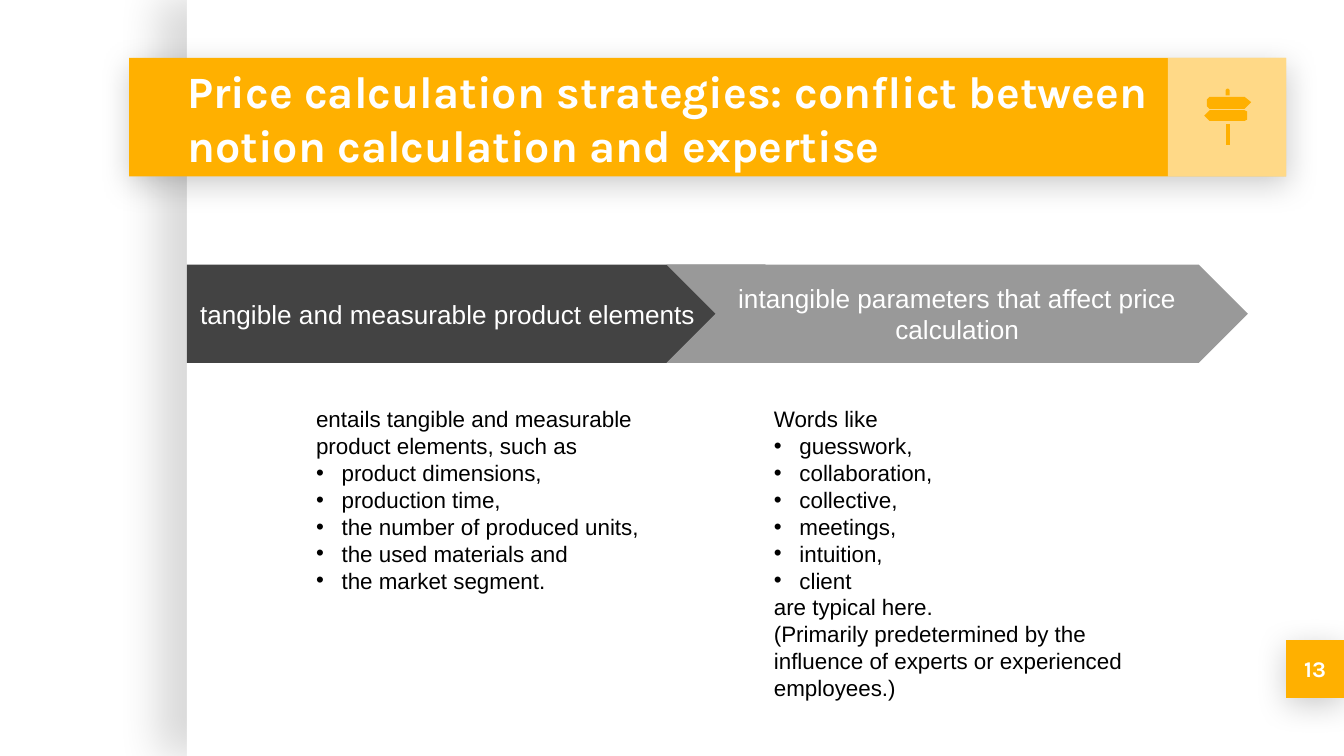
import pptx
import pptx.dml.color
import pptx.enum.shapes
import pptx.enum.text
import pptx.oxml
import pptx.oxml.ns
import pptx.util

ORANGE, WHITE, BLACK = "FFB000", "FFFFFF", "000000"
SHAPES = pptx.enum.shapes.MSO_SHAPE
ALIGN = pptx.enum.text.PP_ALIGN
ANCHOR = pptx.enum.text.MSO_ANCHOR
NAMESPACE = pptx.oxml.ns.nsdecls("a")

# A 16:9 slide
presentation = pptx.Presentation()
presentation.slide_width = pptx.util.Inches(10)
presentation.slide_height = presentation.slide_width * 9 // 16
slide = presentation.slides.add_slide(presentation.slide_layouts[6])

# Square grid: 100 columns across the slide, rows of the same size
cell = presentation.slide_width // 100
indent = int(1.9 * cell)


def paint(fill, color):
    fill.solid()
    fill.fore_color.rgb = pptx.dml.color.RGBColor.from_string(color)


def write(shape, *lines, size=12, font="Arial", color=WHITE, bold=False,
          align=ALIGN.LEFT, anchor=ANCHOR.MIDDLE):
    """Fill a shape with paragraphs; a line starting with • becomes a bullet."""
    frame = shape.text_frame
    frame.word_wrap = True
    frame.vertical_anchor = anchor
    frame.margin_left = frame.margin_right = cell
    frame.margin_top = frame.margin_bottom = cell
    for index, line in enumerate(lines):
        paragraph = frame.add_paragraph() if index else frame.paragraphs[0]
        paragraph.alignment = align
        if line.startswith("•"):
            properties = paragraph._p.get_or_add_pPr()
            properties.set("marL", str(indent))
            properties.set("indent", str(-indent))
            for bullet in (f'<a:buClr {NAMESPACE}><a:srgbClr val="{color}"/></a:buClr>',
                           f'<a:buFont {NAMESPACE} typeface="{font}"/>',
                           f'<a:buChar {NAMESPACE} char="•"/>'):
                properties.append(pptx.oxml.parse_xml(bullet))
        run = paragraph.add_run()
        run.text = line.lstrip("• ")
        run.font.size = pptx.util.Pt(size)
        run.font.name = font
        run.font.bold = bold
        paint(run.font.fill, color)


# Panels: place, fill, opacity %, shadow (opacity %, blur pt, distance pt, degrees)
soft_shadow = (20, 16.9, 3.8, 90)
number_place = (95.7, 47.63, 4.3, 4.3)
panels = [
    ((13.9, 0, 86.1, 56.25), WHITE, 100, (15, 22.5, 15, 180)),
    (number_place, ORANGE, 100, soft_shadow),
    ((9.6, 4.3, 86.1, 8.83), ORANGE, 100, soft_shadow),
    ((86.9, 4.3, 8.8, 8.83), WHITE, 53, None),
]
for place, color, opacity, shadow in panels:
    panel = slide.shapes.add_shape(SHAPES.RECTANGLE, *(int(part * cell) for part in place))
    panel.shadow.inherit = False
    panel.line.fill.background()
    paint(panel.fill, color)
    if opacity < 100:
        panel_color = panel._element.spPr.find(".//" + pptx.oxml.ns.qn("a:srgbClr"))
        panel_color.append(pptx.oxml.parse_xml(
            f'<a:alpha {NAMESPACE} val="{opacity * 1000}"/>'))
    if shadow:
        strength, blur, distance, angle = shadow
        effects = panel._element.spPr.find(pptx.oxml.ns.qn("a:effectLst"))
        effects.append(pptx.oxml.parse_xml(
            f'<a:outerShdw {NAMESPACE} blurRad="{pptx.util.Pt(blur)}" '
            f'dist="{pptx.util.Pt(distance)}" dir="{angle * 60000}" algn="bl" '
            f'rotWithShape="0"><a:srgbClr val="{BLACK}">'
            f'<a:alpha val="{strength * 1000}"/></a:srgbClr></a:outerShdw>'))

# Title and page number
title = slide.shapes.add_textbox(*(int(part * cell) for part in (12.95, 4.33, 73.7, 8.83)))
write(title, "Price calculation strategies: conflict between notion calculation and expertise",
      size=24, font="Karla", bold=True)
number = slide.shapes.add_textbox(*(int(part * cell) for part in number_place))
write(number, "13", font="Karla", bold=True, align=ALIGN.CENTER)

# Signpost icon, in tenths of a grid cell
signpost = [
    [(900, 72), (898, 74), (898, 79), (900, 81), (926, 81), (931, 76), (926, 72)],
    [(900, 82), (896, 86), (900, 90), (926, 90), (928, 89), (928, 83), (926, 82)],
    [(913, 66), (912, 67), (912, 71), (915, 71), (915, 67), (914, 66)],
    [(912, 92), (912, 108), (915, 108), (915, 92)],
]
for points in signpost:
    builder = slide.shapes.build_freeform(*points[0], scale=cell / 10)
    builder.add_line_segments(points[1:], close=True)
    board = builder.convert_to_shape()
    board.shadow.inherit = False
    board.line.fill.background()
    paint(board.fill, ORANGE)

# Two arrows, each with its explanation below
steps = [
    (SHAPES.PENTAGON, 13.9, 46.7, "434343", ALIGN.LEFT,
     "tangible and measurable product elements", 22.53, 29.5,
     ["entails tangible and measurable product elements, such as",
      "• product dimensions,", "• production time,", "• the number of produced units,",
      "• the used materials and", "• the market segment."]),
    (SHAPES.CHEVRON, 49.6, 43.25, "999999", ALIGN.CENTER,
     "intangible parameters that affect price calculation", 56.6, 29.3,
     ["Words like", "• guesswork,", "• collaboration,", "• collective,", "• meetings,",
      "• intuition,", "• client", "are typical here.",
      "(Primarily predetermined by the influence of experts or experienced employees.)"]),
]
for kind, left, width, color, align, heading, text_left, text_width, lines in steps:
    arrow = slide.shapes.add_shape(
        kind, *(int(part * cell) for part in (left, 19.7, width, 7.3)))
    arrow.adjustments[0] = 0.5
    arrow.shadow.inherit = False
    arrow.line.fill.background()
    paint(arrow.fill, color)
    write(arrow, heading, size=14, align=align)
    details = slide.shapes.add_textbox(
        *(int(part * cell) for part in (text_left, 29.17, text_width, 21)))
    write(details, *lines, color=BLACK, anchor=ANCHOR.TOP)

presentation.save("out.pptx")
